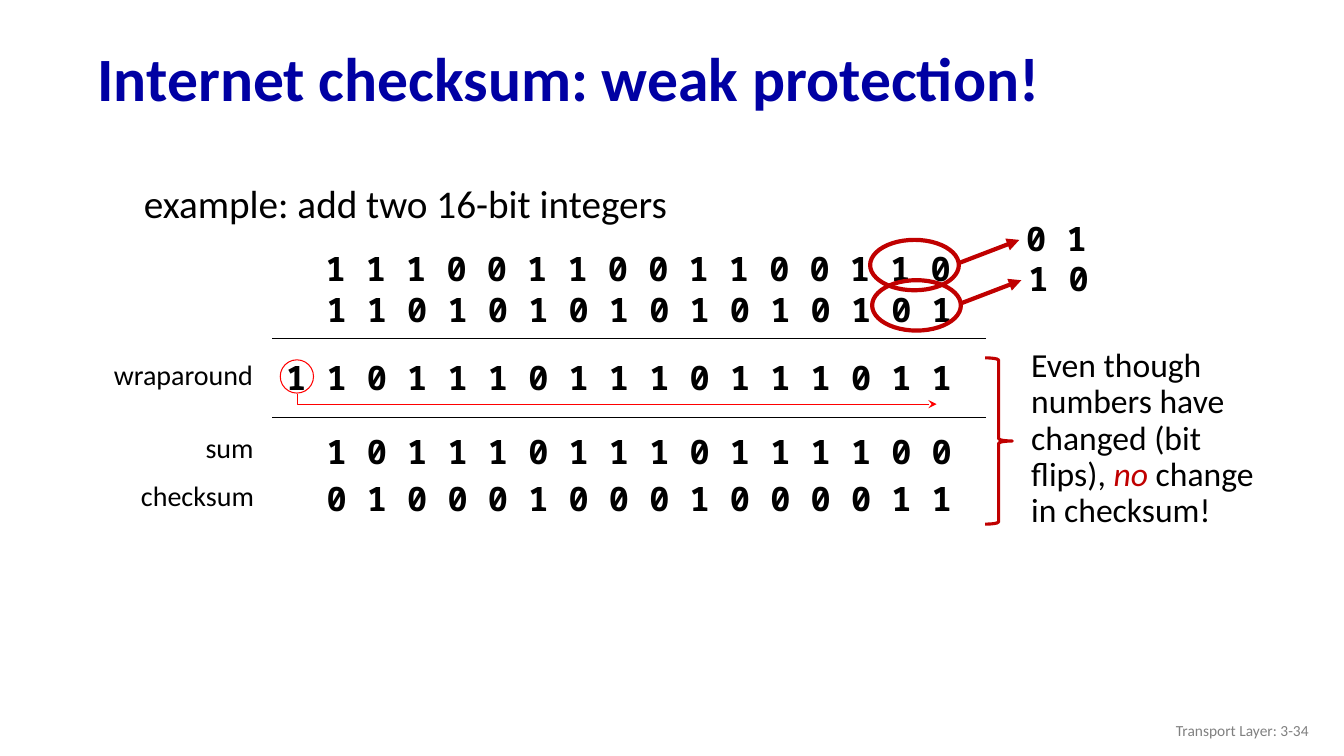
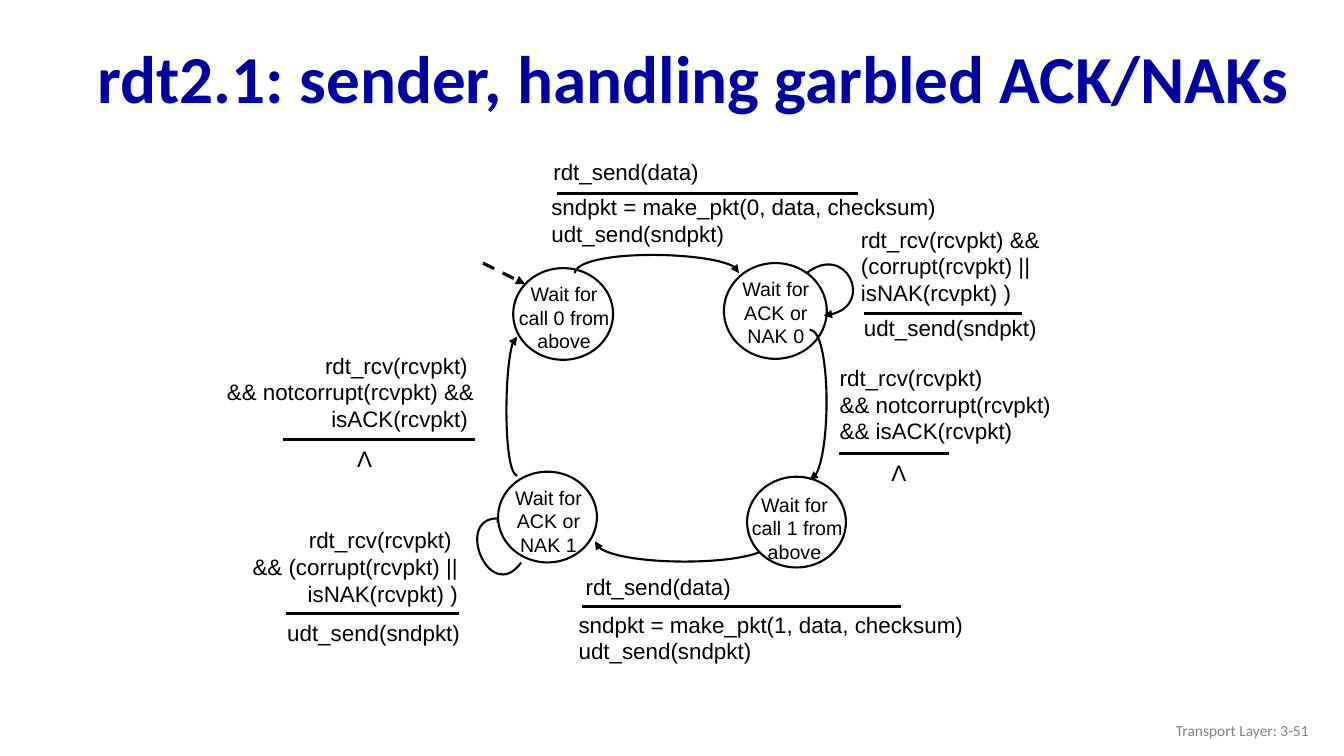
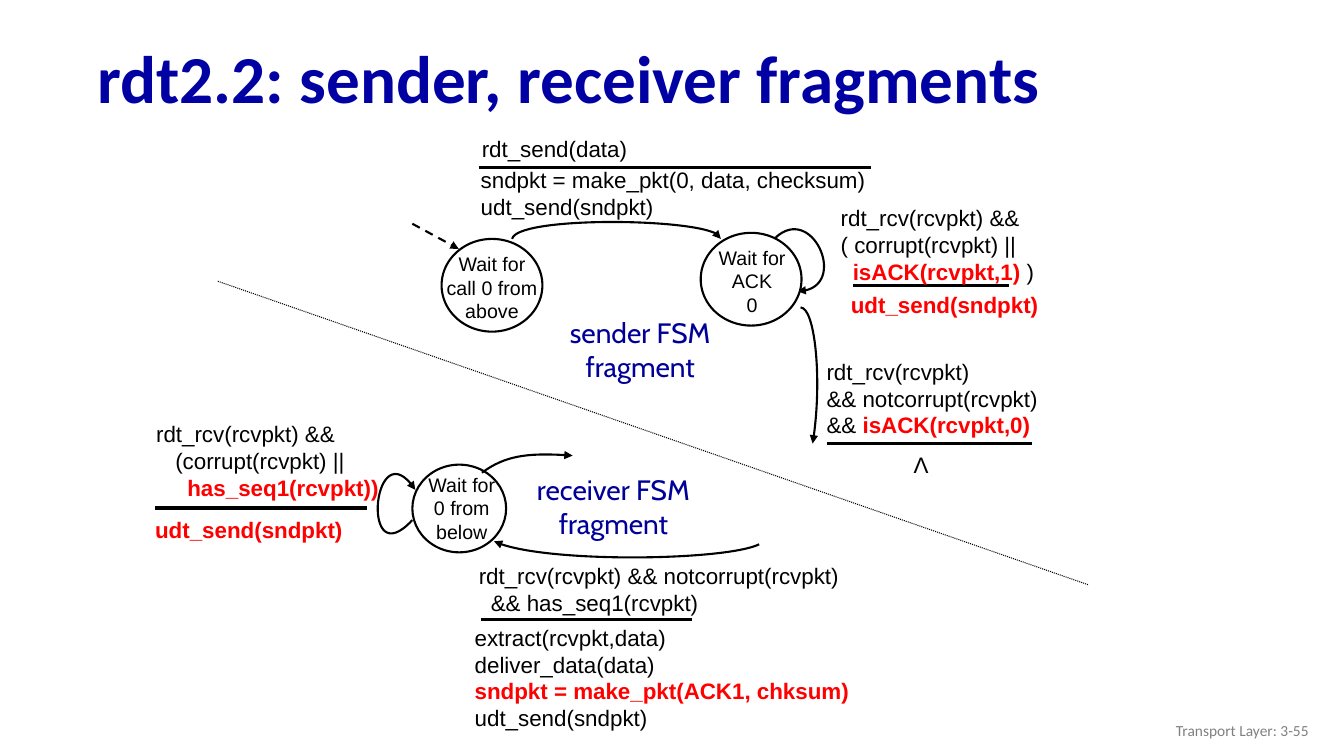
from math import cos, radians, sin

from pptx import Presentation
from pptx.dml.color import RGBColor
from pptx.enum.dml import MSO_LINE
from pptx.enum.shapes import MSO_CONNECTOR, MSO_SHAPE
from pptx.enum.text import MSO_ANCHOR, PP_ALIGN
from pptx.oxml.ns import qn
from pptx.util import Inches, Pt
from lxml import etree

LEFT, MID, RIGHT = PP_ALIGN.LEFT, PP_ALIGN.CENTER, PP_ALIGN.RIGHT
OVAL, BRACE = MSO_SHAPE.OVAL, MSO_SHAPE.RIGHT_BRACE
DASH, DOTS = MSO_LINE.DASH, MSO_LINE.ROUND_DOT
STRAIGHT = MSO_CONNECTOR.STRAIGHT


class Theme:
    navy, blue, gray = "0000A3", "000099", "808080"
    black, white, red, dark = "000000", "FFFFFF", "FF0000", "C00000"
    body, code, mono, tag = "Calibri", "Arial", "Noto Sans Mono", "Cabin"
    big, title, lead, bits, label = 48, 44, 28, 24, 20
    note, state, foot = 16, 14, 11
    thin, fine, mid, rule, bold = 0.75, 1, 1.5, 2.25, 3


# ---- Content: checksum (asterisks mark highlighted words) ----
BITS = [  # left, top, digits
    (3.13, 2.41, "1110011001100110"),
    (3.14, 2.82, "1101010101010101"),
    (2.74, 3.49, "11011101110111011"),
    (3.14, 4.23, "1011101110111100"),
    (3.14, 4.69, "0100010001000011"),
]
LABELS = [(1.03, 3.5, 1.59, "wraparound"), (1.94, 4.22, 0.7, "sum"),
          (1.3, 4.7, 1.34, "checksum")]
FLIPS = [(8.63, 2.38, "01"), (8.65, 2.78, "10")]
MORAL = "Even though numbers have changed (bit flips), *no* change in checksum!"

# ---- Content: state machines ----
# states: oval left, top, width, height; text left, top, width; lines
# arcs: turn in degrees, four curve points with the arrow at the last
# rules: left, right, height; notes: left, top, width, align, lines
# A line may be a pair of left indent and text.
FULL = {
    "title": "rdt2.1: sender, handling garbled ACK/NAKs",
    "page": 51,
    "start": ((4.79, 2.61), (5.21, 2.82), Theme.rule),
    "states": [
        (5.09, 2.66, 0.99, 0.91, 5, 2.75, 1.19, ["Wait for call 0 from above"]),
        (7.18, 2.61, 1.02, 0.95, 7.1, 2.7, 1.19, ["Wait for ACK or NAK 0"]),
        (7.41, 4.73, 0.98, 0.9, 7.27, 4.84, 1.22,
         ["Wait for", " call 1 from above"]),
        (4.94, 4.68, 0.98, 0.9, 4.87, 4.77, 1.14, ["Wait for ACK or NAK 1"]),
    ],
    "under": [
        (0, [(7.65, 5.37), (7.65, 5.62), (5.93, 5.64), (5.9, 5.37)]),
        (243.5, [(5.17, 5.58), (4.86, 6.01), (4.46, 5.05), (5.01, 5.15)]),
    ],
    "over": [
        (0, [(5.7, 2.71), (5.74, 2.47), (7.33, 2.49), (7.33, 2.71)]),
        (337.4, [(8, 2.71), (8.39, 2.4), (8.71, 3.08), (8.17, 3.13)]),
        (90, [(8.03, 3.27), (8.24, 3.27), (8.25, 4.73), (8.03, 4.76)]),
        (270, [(5.13, 4.72), (4.99, 4.69), (5, 3.34), (5.13, 3.34)]),
    ],
    "rules": [(5.52, 8.51, 1.92), (8.57, 10.14, 3.11), (5.77, 8.94, 6.02),
              (2.84, 4.55, 6.09), (8.32, 9.41, 4.5), (2.81, 4.71, 4.36)],
    "notes": [
        (5.39, 1.52, 2.31, LEFT, ["rdt_send(data)"]),
        (5.37, 1.87, 4.04, LEFT,
         ["sndpkt = make_pkt(0, data, checksum)", "udt_send(sndpkt)"]),
        (8.44, 2.19, 3.48, LEFT,
         ["rdt_rcv(rcvpkt) && (corrupt(rcvpkt) ||", "isNAK(rcvpkt) )"]),
        (8.47, 3.07, 2.47, LEFT, ["udt_send(sndpkt)"]),
        (5.71, 5.64, 2.61, LEFT, ["rdt_send(data)"]),
        (5.64, 6.01, 4.12, LEFT,
         ["sndpkt = make_pkt(1, data, checksum)", "udt_send(sndpkt)"]),
        (2.03, 5.17, 2.61, RIGHT,
         ["rdt_rcv(rcvpkt) ", "&& (corrupt(rcvpkt) ||", "isNAK(rcvpkt) )"]),
        (2.75, 6.09, 1.99, LEFT, ["udt_send(sndpkt)"]),
        (8.23, 3.56, 3.28, LEFT,
         ["rdt_rcv(rcvpkt)", "&& notcorrupt(rcvpkt)", "&& isACK(rcvpkt)"]),
        (8.74, 4.51, 0.35, MID, ["Λ"]),
        (0.84, 3.44, 3.96, RIGHT,
         ["rdt_rcv(rcvpkt) ", "&& notcorrupt(rcvpkt) && isACK(rcvpkt) "]),
        (3.44, 4.37, 0.35, MID, ["Λ"]),
    ],
    "tags": [],
}
PARTS = {
    "title": "rdt2.2: sender, receiver fragments",
    "page": 55,
    "start": ((4.09, 2.22), (4.55, 2.47), Theme.mid),
    "states": [
        (4.38, 2.37, 1, 0.92, 4.3, 2.45, 1.16, ["Wait for call 0 from above"]),
        (6.95, 2.31, 1, 0.92, 6.88, 2.39, 1.16, ["Wait for ACK", "0"]),
        (4.09, 4.61, 0.93, 0.87, 4.14, 4.64, 0.88, ["Wait for ", "0 from below"]),
    ],
    "under": [
        (0, [(5.08, 2.37), (5.12, 2.15), (7.15, 2.16), (7.15, 2.37)]),
        (337.4, [(7.69, 2.36), (8.05, 2.02), (8.44, 2.88), (7.91, 2.89)]),
        (0, [(7.94, 3.05), (8.08, 3.05), (8.16, 3.79), (8.06, 4.4)]),
    ],
    "over": [
        (0, [(4.78, 4.69), (5.01, 4.52), (5.26, 4.49), (5.68, 4.52)]),
        (0, [(7.53, 5.4), (7.2, 5.56), (5.36, 5.59), (4.9, 5.37)]),
        (0, [(4.09, 5.16), (3.58, 5.71), (3.7, 4.23), (4.12, 4.86)]),
    ],
    "rules": [(4.75, 8.64, 1.66), (8.46, 10.01, 2.83), (8.2, 10.24, 4.4),
              (4.77, 6.86, 6.15), (1.54, 3.64, 5.04)],
    "notes": [
        (4.68, 1.29, 1.89, LEFT, ["rdt_send(data)"]),
        (4.67, 1.6, 4.07, LEFT,
         ["sndpkt = make_pkt(0, data, checksum)", "udt_send(sndpkt)"]),
        (8.24, 1.98, 2.97, LEFT,
         ["rdt_rcv(rcvpkt) &&", "( corrupt(rcvpkt) ||",
          (0.12, "*isACK(rcvpkt,1)* )")]),
        (8.34, 2.84, 2.32, LEFT, ["*udt_send(sndpkt)*"]),
        (8.1, 3.5, 2.64, LEFT,
         ["rdt_rcv(rcvpkt)", "&& notcorrupt(rcvpkt)", "&& *isACK(rcvpkt,0)*"]),
        (8.93, 4.43, 0.41, MID, ["Λ"]),
        (4.65, 5.53, 4.31, LEFT,
         ["rdt_rcv(rcvpkt) && notcorrupt(rcvpkt)", (0.12, "&& has_seq1(rcvpkt)")]),
        (4.61, 6.14, 4.57, LEFT,
         ["extract(rcvpkt,data)", "deliver_data(data)",
          "*sndpkt = make_pkt(ACK1, chksum)*", "udt_send(sndpkt)"]),
        (1.45, 4.12, 2.58, LEFT,
         ["rdt_rcv(rcvpkt) &&", (0.19, "(corrupt(rcvpkt) ||"),
          (0.31, "*has_seq1(rcvpkt))*")]),
        (1.44, 5.07, 2.23, LEFT, ["*udt_send(sndpkt)*"]),
    ],
    "tags": [(5.54, 3.08, 1.62, ["sender FSM", "fragment"]),
             (5.2, 4.64, 1.77, ["receiver FSM", "fragment"])],
}
DEPTH = {1: 0.37, 2: 0.44, 3: 0.62, 4: 0.76}  # note height by line count


# ---- Drawing helpers ----
def rgb(code):
    return RGBColor.from_string(code)


def write(slide, x, y, w, lines, size, font=Theme.body, color=Theme.black,
          align=LEFT, bold=False, high=None, anchor=MSO_ANCHOR.TOP,
          lead=None, hot=Theme.red, slant=False, wrap=True):
    high = high or round(len(lines) * size / 60 + 0.1, 2)
    box = slide.shapes.add_textbox(Inches(x), Inches(y), Inches(w), Inches(high))
    frame = box.text_frame
    frame.word_wrap, frame.vertical_anchor = wrap, anchor
    for i, line in enumerate(lines):
        pad, words = (0, line) if isinstance(line, str) else line
        para = frame.paragraphs[0] if i == 0 else frame.add_paragraph()
        if pad:
            para._p.get_or_add_pPr().set("marL", str(Inches(pad)))
        para.alignment = align
        if lead:
            para.line_spacing = lead
        for k, part in enumerate(words.split("*")):
            if not part:
                continue
            mark = k % 2 == 1
            run = para.add_run()
            run.text = part
            run.font.name, run.font.size = font, Pt(size)
            run.font.bold = bold or (mark and not slant)
            run.font.italic = mark and slant
            run.font.color.rgb = rgb(hot if mark else color)


def ink(shape, color, width, dash=None, tip=None):
    shape.line.color.rgb = rgb(color)
    shape.line.width = Pt(width)
    if dash:
        shape.line.dash_style = dash
    if tip:
        ln = shape.element.spPr.find(qn("a:ln"))
        etree.SubElement(ln, qn("a:tailEnd")).set("type", tip)


def line(slide, a, b, width, color=Theme.black, **style):
    link = slide.shapes.add_connector(STRAIGHT, *map(Inches, a + b))
    ink(link, color, width, **style)
    etree.SubElement(link.element.spPr, qn("a:effectLst"))


def form(slide, kind, at, color, width, fill=None):
    shape = slide.shapes.add_shape(kind, *map(Inches, at))
    shape.shadow.inherit = False
    if fill:
        shape.fill.solid()
        shape.fill.fore_color.rgb = rgb(fill)
    else:
        shape.fill.background()
    ink(shape, color, width)


def trace(slide, points, color, width, tip):
    spots = [(Inches(x), Inches(y)) for x, y in points]
    pen = slide.shapes.build_freeform(*spots[0])
    pen.add_line_segments(spots[1:], close=False)
    shape = pen.convert_to_shape()
    shape.shadow.inherit = False
    shape.fill.background()
    ink(shape, color, width, tip=tip)
    return shape


def spin(point, turn):
    c, s = cos(radians(turn)), sin(radians(turn))
    return point[0] * c - point[1] * s, point[0] * s + point[1] * c


def arc(slide, turn, knots):
    # Lay the curve out unturned, centred where the turned frame belongs
    flat = [spin(k, -turn) for k in knots]
    hub = [(min(v) + max(v)) / 2 for v in zip(*flat)]
    goal = spin(hub, turn)
    flat = [[v - h + g for v, h, g in zip(k, hub, goal)] for k in flat]
    shape = trace(slide, flat, Theme.black, Theme.mid, "triangle")
    shape.rotation = turn
    # Join the three later points into one cubic curve
    route = next(shape.element.iter(qn("a:path")))
    curve = etree.SubElement(route, qn("a:cubicBezTo"))
    for leg in route.findall(qn("a:lnTo")):
        curve.append(leg[0])
        route.remove(leg)


def start(deck, title, page, size):
    slide = deck.slides.add_slide(deck.slide_layouts[6])
    write(slide, 0.87, 0.32, 12.14, [title], size, color=Theme.navy, bold=True,
          high=0.98, anchor=MSO_ANCHOR.MIDDLE, lead=0.9)
    write(slide, 10.08, 7.05, 3, [f"Transport Layer: 3-{page}"], Theme.foot,
          color=Theme.gray, align=RIGHT, high=0.4, anchor=MSO_ANCHOR.MIDDLE)
    return slide


# ---- Slides ----
def digits(slide, x, y, row):
    write(slide, x, y, 0.4 * len(row) + 0.05, [" ".join(row)], Theme.bits,
          Theme.mono, bold=True, wrap=False)


def checksum(deck):
    slide = start(deck, "Internet checksum: weak protection!", 34, Theme.title)
    write(slide, 1.33, 1.59, 8.5, ["example: add two 16-bit integers"],
          Theme.lead, high=3, lead=1.3)
    for y in (3.36, 4.14):
        line(slide, (9.78, y), (2.7, y), Theme.fine)
    for x, y, w, name in LABELS:
        write(slide, x, y, w, [name], Theme.label, wrap=False)
    for row in BITS:
        digits(slide, *row)
    # Carry wrapped around
    form(slide, OVAL, (2.78, 3.57, 0.33, 0.33), Theme.red, Theme.thin)
    trace(slide, [(2.95, 3.91), (2.95, 4.01), (9.29, 4.01)],
          Theme.red, Theme.thin, "stealth")
    # Flipped bits
    for x, y, pair in FLIPS:
        form(slide, OVAL, (x, y, 0.88, 0.5), Theme.dark, Theme.bold)
        line(slide, (x + 0.88, y + 0.23), (x + 1.48, y), Theme.bold,
             Theme.dark, tip="triangle")
        digits(slide, x + 1.45, y - 0.27, pair)
    form(slide, BRACE, (9.77, 3.55, 0.27, 1.65), Theme.dark, Theme.rule)
    write(slide, 10.13, 3.41, 2.63, [MORAL], Theme.bits, high=1.92, lead=0.9,
          hot=Theme.dark, slant=True)


def machine(deck, data):
    slide = start(deck, data["title"], data["page"], Theme.big)
    for turn, knots in data["under"]:
        arc(slide, turn, knots)
    for *at, x, y, w, words in data["states"]:
        form(slide, OVAL, at, Theme.black, Theme.mid, Theme.white)
        write(slide, x, y, w, words, Theme.state, Theme.code, align=MID, high=0.67)
    for turn, knots in data["over"]:
        arc(slide, turn, knots)
    a, b, width = data["start"]
    line(slide, a, b, width, dash=DASH, tip="triangle")
    for x, end, y in data["rules"]:
        line(slide, (x, y), (end, y), Theme.rule)
    for x, y, w, align, words in data["notes"]:
        write(slide, x, y, w, words, Theme.note, Theme.code, align=align,
              high=DEPTH[len(words)])
    for x, y, w, words in data["tags"]:
        write(slide, x, y, w, words, Theme.label, Theme.tag, Theme.blue, MID,
              wrap=False)
    return slide


def main():
    deck = Presentation()
    deck.slide_width, deck.slide_height = Inches(13.33), Inches(7.5)
    checksum(deck)
    machine(deck, FULL)
    split = machine(deck, PARTS)
    line(split, (2.16, 2.79), (10.79, 5.8), Theme.thin, dash=DOTS)
    deck.save("out.pptx")


if __name__ == "__main__":
    main()
